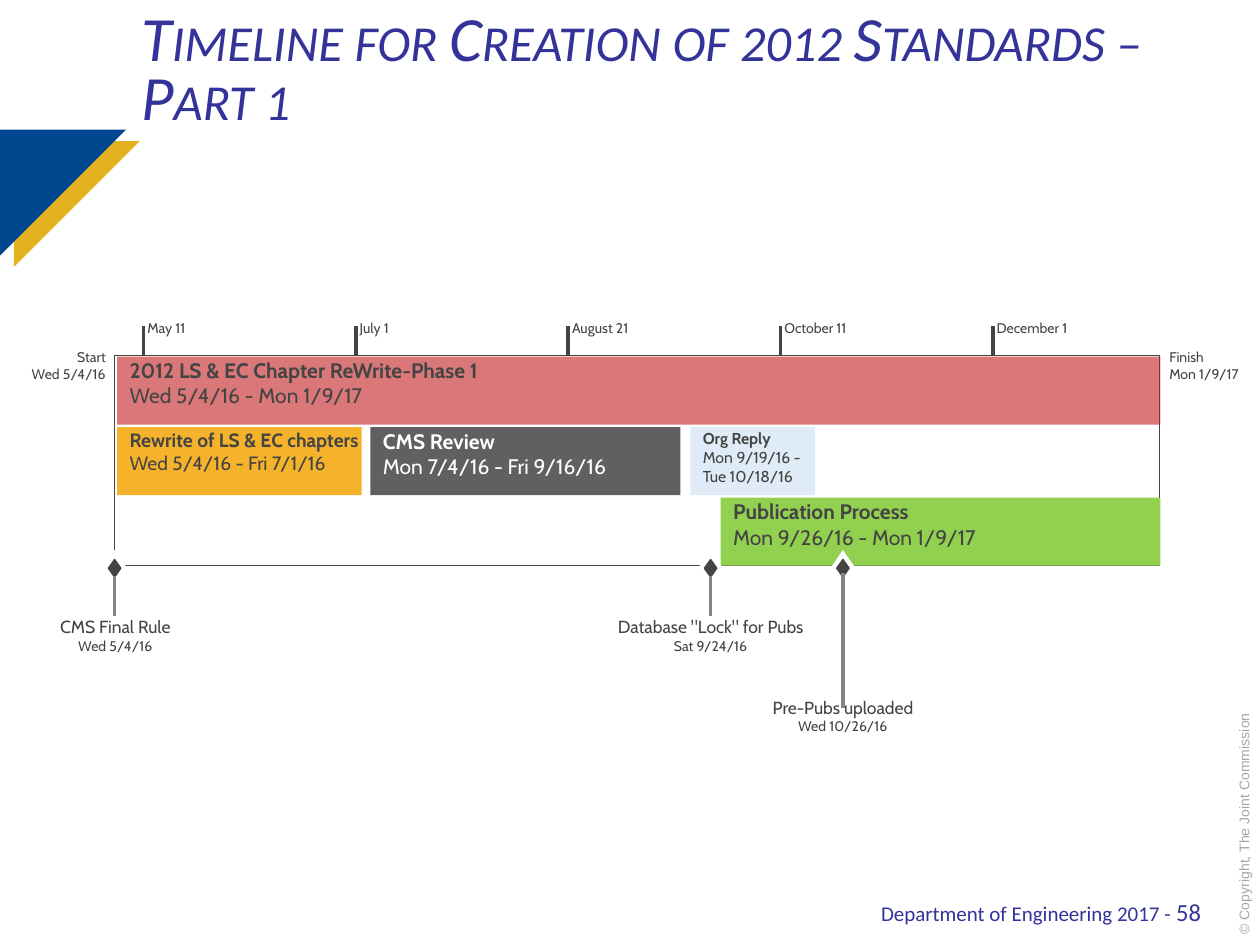
from dataclasses import dataclass

import copy
import pptx
import pptx.dml.color
import pptx.enum.shapes
import pptx.enum.text
import pptx.oxml
import pptx.oxml.ns
import pptx.util
from pptx.util import Inches

COLORS = {
    "white": "FFFFFF", "text": "444444", "stem": "848484", "copyright": "A6A6A6",
    "title": "333399", "navy": "00478F", "gold": "E3B11F", "red": "C21D1F",
    "orange": "F5B22B", "gray": "606060", "pale": "DFEBF7", "green": "92D050",
}
ALIGN = pptx.enum.text.PP_ALIGN
SHAPE = pptx.enum.shapes.MSO_SHAPE
FRAME_LEFT, FRAME_TOP, FRAME_WIDTH, FRAME_HEIGHT = 0.91, 2.82, 8.29, 1.67
BAR_TOP, BAR_HEIGHT, BAR_PITCH = 2.83, 0.54, 0.56
TICK_LEFT, TICK_PITCH = 1.14, (7.88 - 1.14) / 4
MILESTONE_Y = 4.51


@dataclass
class Run:
    text: str
    size: float
    font: str = "Cabin"
    color: str = "text"
    bold: bool = False


@dataclass
class Bar:
    name: str
    dates: str
    left: float
    width: float
    row: int
    fill: str
    size: float = 12
    color: str = "text"
    opacity: int = 100


@dataclass
class Milestone:
    name: str
    date: str
    x: float
    stem: tuple[float, float]
    label: tuple[float, float, float]


TICKS = [("May 11", 0.46), ("July 1", 0.36), ("August 21", 0.62),
         ("October 11", 0.68), ("December 1", 0.74)]
BARS = [
    Bar("2012 LS & EC Chapter ReWrite-Phase 1", "Wed 5/4/16 - Mon 1/9/17",
        0.93, 8.28, 0, "red", opacity=60),
    Bar("Rewrite of LS & EC chapters", "Wed 5/4/16 - Fri 7/1/16",
        0.93, 1.94, 1, "orange", size=11),
    Bar("CMS Review", "Mon 7/4/16 - Fri 9/16/16", 2.94, 2.46, 1, "gray", color="white"),
    Bar("Org Reply", "Mon 9/19/16 - Tue 10/18/16", 5.48, 0.99, 1, "pale", size=9),
    Bar("Publication Process", "Mon 9/26/16 - Mon 1/9/17", 5.72, 3.49, 2, "green"),
]
MILESTONES = [
    Milestone("CMS Final Rule", "Wed 5/4/16", 0.91, (4.57, 4.89), (0.39, 4.89, 1.05)),
    Milestone('Database "Lock" for Pubs', "Sat 9/24/16", 5.64, (4.57, 4.89), (4.77, 4.89, 1.74)),
    Milestone("Pre-Pubs uploaded", "Wed 10/26/16", 6.69, (4.55, 5.62), (6.02, 5.53, 1.34)),
]


def rgb(name: str) -> pptx.dml.color.RGBColor:
    return pptx.dml.color.RGBColor.from_string(COLORS[name])


def add_runs(p, runs: list[Run], broken: bool = False) -> None:
    """Add the runs, each on its own line if broken."""
    for i, run in enumerate(runs):
        if broken and i:
            p.add_line_break()
            # The break takes the size of the line it ends.
            p._p[-1].append(copy.deepcopy(r._r.rPr))
        r = p.add_run()
        r.text = run.text
        r.font.size = pptx.util.Pt(run.size)
        r.font.name = run.font
        r.font.bold = run.bold
        r.font.color.rgb = rgb(run.color)


def set_insets(tf, left: float, others: float) -> None:
    tf.margin_left = Inches(left)
    tf.margin_top = tf.margin_right = tf.margin_bottom = Inches(others)


def add_label(s, left: float, top: float, width: float, height: float,
              runs: list[Run], align=ALIGN.LEFT, inset: float = 0) -> None:
    tf = s.shapes.add_textbox(*map(Inches, (left, top, width, height))).text_frame
    tf.word_wrap = True
    set_insets(tf, inset, 0)
    tf.paragraphs[0].alignment = align
    add_runs(tf.paragraphs[0], runs, broken=True)


def add_filled(s, kind, left: float, top: float, width: float, height: float,
               fill: str, line: str | None = None):
    sp = s.shapes.add_shape(kind, *map(Inches, (left, top, width, height)))
    style(sp, fill, line)
    return sp


def style(sp, fill: str, line: str | None = None) -> None:
    sp.shadow.inherit = False
    sp.fill.solid()
    sp.fill.fore_color.rgb = rgb(fill)
    if line:
        sp.line.color.rgb = rgb(line)
        sp.line.width = 0
    else:
        sp.line.fill.background()


def add_vertical(s, x: float, top: float, bottom: float, color: str) -> None:
    line = s.shapes.add_connector(pptx.enum.shapes.MSO_CONNECTOR.STRAIGHT,
                                  *map(Inches, (x, top, x, bottom)))
    line.line.color.rgb = rgb(color)
    line.line.width = 0
    line._element.spPr.append(pptx.oxml.parse_xml(
        f"<a:effectLst {pptx.oxml.ns.nsdecls('a')}/>"))


def add_corner(s, left: float, top: float, fill: str) -> None:
    builder = s.shapes.build_freeform(Inches(left), Inches(top))
    builder.add_line_segments([(Inches(left + 1), Inches(top)),
                               (Inches(left), Inches(top + 1))], close=True)
    style(builder.convert_to_shape(), fill)


def add_bar(s, bar: Bar) -> None:
    sp = add_filled(s, SHAPE.RECTANGLE, bar.left, BAR_TOP + bar.row * BAR_PITCH,
                    bar.width, BAR_HEIGHT, bar.fill)
    if bar.opacity < 100:
        clr = sp._element.spPr.find(".//" + pptx.oxml.ns.qn("a:srgbClr"))
        clr.append(pptx.oxml.parse_xml(
            f'<a:alpha {pptx.oxml.ns.nsdecls("a")} val="{bar.opacity * 1000}"/>'))
    tf = sp.text_frame
    tf.word_wrap = True
    tf.vertical_anchor = pptx.enum.text.MSO_ANCHOR.TOP
    set_insets(tf, 0.1, 0.01)
    tf.paragraphs[0].alignment = ALIGN.LEFT
    add_runs(tf.paragraphs[0], [Run(bar.name, bar.size, color=bar.color, bold=True),
                                Run(bar.dates, bar.size, color=bar.color)], broken=True)


def add_milestone(s, m: Milestone) -> None:
    for width, height, fill, line in ((0.2, 0.29, "white", None), (0.1, 0.14, "text", "text")):
        add_filled(s, SHAPE.DIAMOND, m.x - width / 2, MILESTONE_Y - height / 2,
                   width, height, fill, line)
    add_vertical(s, m.x, *m.stem, "stem")
    add_label(s, *m.label, 0.57, [Run(m.name, 10), Run(m.date, 8)], ALIGN.CENTER)


def add_title(s) -> None:
    sp = s.shapes.title
    sp.left, sp.top, sp.width, sp.height = map(Inches, (1.02, 0.04, 8.98, 1.09))
    tf = sp.text_frame
    tf.auto_size = pptx.enum.text.MSO_AUTO_SIZE.NONE
    tf.vertical_anchor = pptx.enum.text.MSO_ANCHOR.MIDDLE
    p = tf.paragraphs[0]
    p.alignment = ALIGN.LEFT
    p.line_spacing = pptx.util.Pt(34)
    add_runs(p, [Run("Timeline for Creation of 2012 Standards – Part 1", 36, "Calibri", "title")])
    p.runs[0].font.italic = True
    p.runs[0]._r.rPr.set("cap", "small")


def add_margin_texts(s) -> None:
    """Add the sideways copyright line and the footer."""
    sp = s.shapes.add_textbox(*map(Inches, (8.89, 6.41, 1.97, 0.24)))
    sp.rotation = 270
    sp.text_frame.word_wrap = False
    add_runs(sp.text_frame.paragraphs[0],
             [Run("© Copyright, The Joint Commission", 8, "Arial", "copyright")])
    tf = s.shapes.add_textbox(*map(Inches, (5.78, 7.07, 3.85, 0.34))).text_frame
    tf.word_wrap = True
    tf.paragraphs[0].alignment = ALIGN.RIGHT
    add_runs(tf.paragraphs[0], [Run("Department of Engineering 2017 - ", 12, "Calibri", "title"),
                                Run("58", 14, "Calibri", "title")])


def main() -> None:
    prs = pptx.Presentation()
    prs.slide_width, prs.slide_height = Inches(10), Inches(7.5)
    s = prs.slides.add_slide(prs.slide_layouts[5])
    add_margin_texts(s)
    add_corner(s, 0.11, 1.12, "gold")
    add_corner(s, 0, 1.03, "navy")
    add_title(s)
    add_filled(s, SHAPE.RECTANGLE, FRAME_LEFT, FRAME_TOP, FRAME_WIDTH, FRAME_HEIGHT,
               "white", "text")
    add_label(s, 0.13, 2.77, 0.71, 0.54, [Run("Start", 8), Run("Wed 5/4/16", 8)], ALIGN.RIGHT)
    add_label(s, 9.28, 2.77, 0.72, 0.54, [Run("Finish", 8), Run("Mon 1/9/17", 8)])
    for i, (text, width) in enumerate(TICKS):
        x = TICK_LEFT + i * TICK_PITCH
        add_label(s, x, 2.54, width, 0.27, [Run(text, 8)], inset=0.03)
        add_vertical(s, x, 2.59, FRAME_TOP, "text")
    for bar in BARS:
        add_bar(s, bar)
    for milestone in MILESTONES:
        add_milestone(s, milestone)
    prs.save("out.pptx")


if __name__ == "__main__":
    main()
